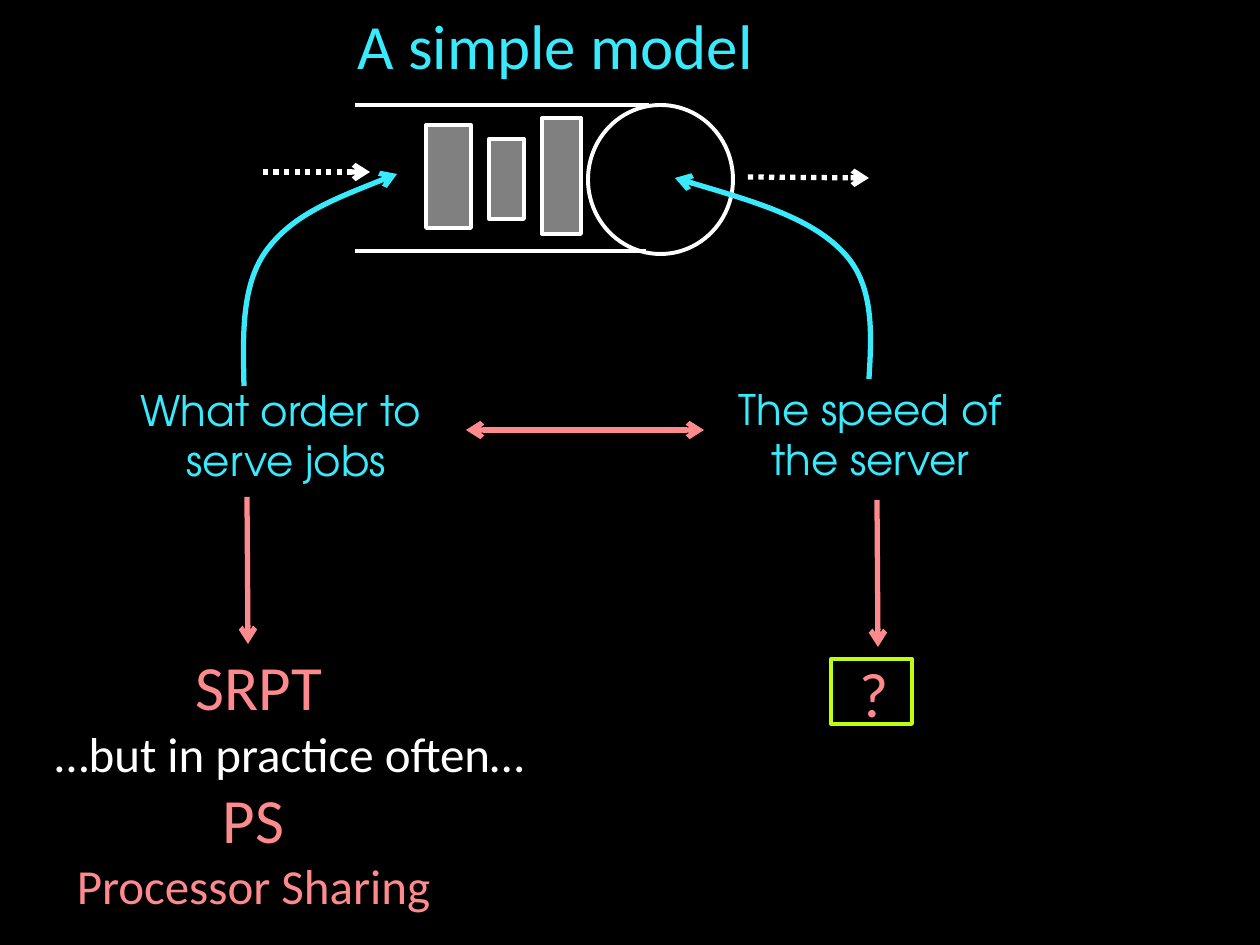
import pptx
import pptx.util
import pptx.dml.color
import pptx.enum.dml
import pptx.enum.shapes
import pptx.enum.text
import pptx.oxml
import pptx.oxml.ns

PX = 914400 / 126
CYAN, PINK, WHITE, GREY, LIME, BLACK = "39EAFD", "FE8A8D", "FFFFFF", "808080", "BEFF0D", "000000"
SHAPE = pptx.enum.shapes.MSO_SHAPE
CENTER = pptx.enum.text.PP_ALIGN.CENTER
LEFT = pptx.enum.text.PP_ALIGN.LEFT


def px(n):
    return pptx.util.Emu(round(n * PX))


def rgb(value):
    return pptx.dml.color.RGBColor.from_string(value)


def child(parent, tag, **attrs):
    el = pptx.oxml.ns.qn(tag)
    node = parent.makeelement(el, attrs)
    parent.append(node)
    return node


def set_line(sp, color, width, head=False, tail=False, dotted=False):
    """Style an outline; head and tail are arrows at its start and end."""
    sp.line.color.rgb = rgb(color)
    sp.line.width = pptx.util.Pt(width)
    if dotted:
        sp.line.dash_style = pptx.enum.dml.MSO_LINE.ROUND_DOT
    ln = sp.line._get_or_add_ln()
    for tag, wanted in (("a:headEnd", head), ("a:tailEnd", tail)):
        if wanted:
            child(ln, tag, type="arrow")


def add_line(s, start, end, color, width=3, **ends):
    cn = s.shapes.add_connector(pptx.enum.shapes.MSO_CONNECTOR.STRAIGHT,
                                *map(px, (*start, *end)))
    set_line(cn, color, width, **ends)
    child(cn._element.spPr, "a:effectLst")


def add_outline(s, kind, box, color, fill=None):
    sp = s.shapes.add_shape(kind, *map(px, box))
    sp.shadow.inherit = False
    if fill:
        sp.fill.solid()
        sp.fill.fore_color.rgb = rgb(fill)
    else:
        sp.fill.background()
    set_line(sp, color, 2.25)


def add_curve(s, points, color):
    """Draw cubic Bezier pieces through points, with an arrow at the start."""
    fb = s.shapes.build_freeform(*points[0], scale=PX)
    fb.add_line_segments(points[1:], close=False)
    sp = fb.convert_to_shape()
    sp.shadow.inherit = False
    sp.fill.background()
    set_line(sp, color, 3, head=True)
    outline = next(sp._element.iter(pptx.oxml.ns.qn("a:path")))
    segments = outline.findall(pptx.oxml.ns.qn("a:lnTo"))
    for i in range(0, len(segments), 3):
        cubic = child(outline, "a:cubicBezTo")
        for segment in segments[i:i + 3]:
            cubic.append(segment[0])
            outline.remove(segment)


def add_text(s, box, lines, color, font="Calibri", align=CENTER, wrap=False, anchor="TOP"):
    """Write (text, size) lines as one paragraph with line breaks."""
    tf = s.shapes.add_textbox(*map(px, box)).text_frame
    tf.word_wrap = wrap
    tf.vertical_anchor = pptx.enum.text.MSO_ANCHOR[anchor]
    p = tf.paragraphs[0]
    p.alignment = align
    for i, (text, size) in enumerate(lines):
        if i:
            p.add_line_break()
        r = p.add_run()
        r.text = text
        for key, value in {"size": pptx.util.Pt(size), "name": font}.items():
            setattr(r.font, key, value)
        r.font.color.rgb = rgb(color)


def draw_queue(s, x, y, w, h):
    """Draw the waiting line with its jobs, the server and the flow arrows."""
    server_w = 145
    add_outline(s, SHAPE.OVAL, (x + w - server_w, y, server_w, h), WHITE)
    for dy, length in ((0, 294), (h - 3, 291)):
        add_line(s, (x + length, y + dy), (x, y + dy), WHITE, 2.25)
    for dx, dy, job_w, job_h in ((71, 20, 45, 103), (134, 34, 35, 80), (187, 13, 39, 116)):
        add_outline(s, SHAPE.RECTANGLE, (x + dx, y + dy, job_w, job_h), WHITE, GREY)
    add_line(s, (x - 92, y + 67), (x + 15, y + 67), WHITE, tail=True, dotted=True)
    add_line(s, (x + w + 15, y + 72), (x + w + 136, y + 73), WHITE, tail=True, dotted=True)


def draw_question(s, x, y, w, h, lines, curve, arrow_x, arrow_y):
    """Draw a question with a curve up to the queue and an arrow down."""
    add_curve(s, [(x + dx, y + dy) for dx, dy in curve], CYAN)
    add_text(s, (x, y, w, h), [(line, 24) for line in lines], CYAN, "TeX Gyre Adventor")
    start = (x + arrow_x, y + arrow_y)
    add_line(s, start, (start[0] + 1, start[1] + 147), PINK, tail=True)


def draw_policies(s, x, y, w):
    add_text(s, (x + 145, y, 152, 89), [("SRPT", 36)], PINK)
    add_text(s, (x, y + 76, w, 72), [("…but in practice often…", 28)], WHITE)
    add_text(s, (x + 24, y + 133, 383, 149), [("PS", 36), ("Processor Sharing", 28)], PINK)


def draw_unknown(s, x, y, w, h):
    add_text(s, (x + 16, y - 11, 55, 72), [("?", 36)], PINK)
    add_outline(s, SHAPE.RECTANGLE, (x, y, w, h), LIME)


def main():
    prs = pptx.Presentation()
    prs.slide_width, prs.slide_height = px(1260), px(945)
    s = prs.slides.add_slide(prs.slide_layouts[6])
    s.background.fill.solid()
    s.background.fill.fore_color.rgb = rgb(BLACK)

    draw_queue(s, 355, 105, 378, 149)
    add_text(s, (345, 6, 580, 77), [("A simple model", 36)], CYAN,
             align=LEFT, wrap=True, anchor="MIDDLE")
    draw_question(s, 125, 378, 323, 115, ("What order to ", "serve jobs"),
                  ((272, -204), (219, -183), (167, -163), (141, -127),
                   (116, -92), (118, -42), (119, 8)), 122, 119)
    draw_question(s, 725, 377, 291, 115, ("The speed of", "the server"),
                  ((-50, -199), (17, -179), (84, -160), (117, -126),
                   (149, -94), (147, -46), (144, 2)), 152, 123)
    add_line(s, (466, 430), (704, 430), PINK, head=True, tail=True)
    draw_policies(s, 38, 641, 503)
    draw_unknown(s, 831, 659, 81, 65)
    prs.save("out.pptx")


if __name__ == "__main__":
    main()
